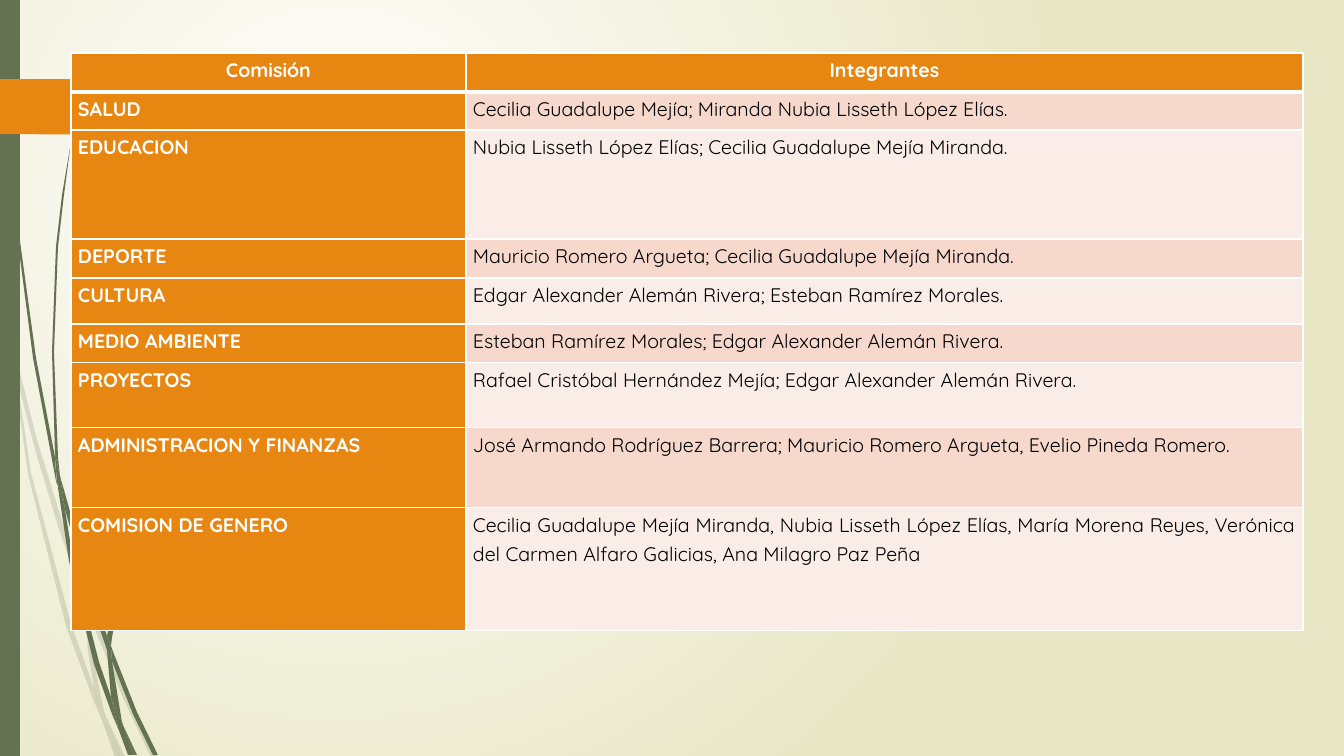
import lxml.etree
import pptx
import pptx.dml.color
import pptx.enum.shapes
import pptx.enum.text
import pptx.oxml
import pptx.oxml.ns
import pptx.util

EMU_PER_PX = 914400 / 100.8
FONT = "Quicksand"
ORANGE, GREEN, WHITE, BLACK = "E78712", "647252", "FFFFFF", "000000"
BANDS = ["F6D9CC", "FAEDE7"]
COLUMN_WIDTHS = [395, 837]
ROW_HEIGHTS = [39, 38, 109, 39, 46, 39, 65, 80, 123]
COMMITTEES = [
    ("Comisión", "Integrantes"),
    ("SALUD", "Cecilia Guadalupe Mejía; Miranda Nubia Lisseth López Elías."),
    ("EDUCACION", "Nubia Lisseth López Elías; Cecilia Guadalupe Mejía Miranda."),
    ("DEPORTE", "Mauricio Romero Argueta; Cecilia Guadalupe Mejía Miranda."),
    ("CULTURA", "Edgar Alexander Alemán Rivera; Esteban Ramírez Morales."),
    ("MEDIO AMBIENTE", "Esteban Ramírez Morales; Edgar Alexander Alemán Rivera."),
    ("PROYECTOS", "Rafael Cristóbal Hernández Mejía; Edgar Alexander Alemán Rivera."),
    ("ADMINISTRACION Y FINANZAS",
     "José Armando Rodríguez Barrera; Mauricio Romero Argueta, Evelio Pineda Romero."),
    ("COMISION DE GENERO",
     "Cecilia Guadalupe Mejía Miranda, Nubia Lisseth López Elías, María Morena Reyes, "
     "Verónica del Carmen Alfaro Galicias, Ana Milagro Paz Peña"),
]
PALE_BLADES = [
    [(11, 353), (9, 325), (0, 284), (0, 301), (10, 347)],
    [(58, 526), (85, 604), (86, 591), (63, 524), (36, 436), (14, 348), (17, 379), (36, 453)],
    [(93, 612), (89, 601), (89, 615), (124, 700), (151, 757), (156, 757), (128, 698)],
    [(120, 757), (125, 757), (106, 717)],
    [(94, 688), (71, 624), (31, 473), (17, 379), (11, 353), (28, 474), (66, 626),
     (93, 699), (102, 720), (100, 713)],
    [(85, 604), (88, 651), (94, 688), (97, 698), (106, 717), (104, 712), (92, 651),
     (89, 615), (89, 613)],
    [(89, 589), (111, 466), (161, 352), (231, 247), (270, 200), (292, 176), (314, 155),
     (314, 154), (291, 176), (270, 199), (230, 246), (159, 351), (108, 465), (86, 589),
     (86, 591), (89, 601)],
    [(102, 720), (115, 757), (120, 757)],
    [(89, 613), (89, 615), (89, 601), (86, 591), (85, 604)],
    [(97, 698), (94, 688), (100, 713), (102, 720), (120, 757), (106, 717)],
]
DARK_BLADES = [
    [(7, 111), (17, 235), (33, 358), (56, 481), (57, 485), (55, 461), (55, 457), (36, 358),
     (19, 234), (8, 110), (5, 48), (4, 0), (3, 0), (4, 48)],
    [(89, 597), (107, 650), (107, 638), (107, 636), (94, 595), (60, 476), (65, 509)],
    [(114, 654), (111, 646), (112, 661), (133, 714), (153, 755), (158, 755), (137, 712)],
    [(111, 697), (99, 662), (73, 560), (65, 509), (57, 481), (69, 561), (94, 664),
     (112, 714), (118, 728), (117, 723)],
    [(60, 476), (58, 457), (54, 352), (58, 247), (64, 195), (71, 142), (62, 195),
     (56, 247), (52, 352), (55, 453)],
    [(134, 755), (137, 755), (123, 725)],
    [(57, 481), (65, 509), (60, 476), (55, 453), (55, 457)],
    [(112, 638), (126, 556), (159, 480), (207, 409), (233, 377), (247, 362), (263, 347),
     (262, 347), (247, 361), (233, 376), (206, 408), (157, 478), (123, 555), (107, 636),
     (111, 646)],
    [(118, 728), (128, 755), (132, 755)],
    [(107, 650), (111, 697), (117, 712), (123, 725), (122, 722), (112, 661), (110, 656)],
    [(107, 650), (110, 656), (112, 661), (111, 646), (107, 636), (107, 638)],
    [(117, 712), (111, 697), (117, 723), (118, 728), (131, 755), (134, 755), (123, 725)],
]
ARROW_TAG = [(174, 109), (149, 134), (147, 135), (0, 134), (0, 79), (147, 79), (149, 80),
             (174, 105), (175, 107)]


def px(length):
    """Turn pixels into EMU."""
    return pptx.util.Emu(round(length * EMU_PER_PX))


def rgb(code):
    """Turn a hex string into a colour."""
    return pptx.dml.color.RGBColor.from_string(code)


def paint_background(slide):
    """Fill the background with a glow that spreads from the upper left."""
    fill = slide.background.fill
    fill.gradient()
    for stop, code in zip(fill.gradient_stops, [WHITE, "E8E6C4"]):
        stop.color.rgb = rgb(code)
    gradient = slide.element.find(".//" + pptx.oxml.ns.qn("a:gradFill"))
    gradient.remove(gradient.find(pptx.oxml.ns.qn("a:lin")))
    gradient.append(pptx.oxml.parse_xml(
        f'<a:path {pptx.oxml.ns.nsdecls("a")} path="circle">'
        '<a:fillToRect l="50000" t="50000" r="100000" b="100000"/></a:path>'))


def paint(shape, code, opacity=100):
    """Give a shape a plain fill without line or shadow."""
    shape.shadow.inherit = False
    shape.line.fill.background()
    shape.fill.solid()
    shape.fill.fore_color.rgb = rgb(code)
    if opacity < 100:
        tint = shape.fill._xPr.find(".//" + pptx.oxml.ns.qn("a:srgbClr"))
        alpha = lxml.etree.SubElement(tint, pptx.oxml.ns.qn("a:alpha"))
        alpha.set("val", str(opacity * 1000))


def add_outline(slide, points, code, opacity=100):
    """Draw a closed filled outline through the points."""
    builder = slide.shapes.build_freeform(*points[0], scale=EMU_PER_PX)
    builder.add_line_segments(points[1:], close=True)
    paint(builder.convert_to_shape(), code, opacity)


def add_borders(cell, top, bottom):
    """Put white borders round a cell, with top and bottom widths in points."""
    properties = cell._tc.get_or_add_tcPr()
    for position, (side, width) in enumerate(zip("LRTB", [1, 1, top, bottom])):
        properties.insert(position, pptx.oxml.parse_xml(
            f'<a:ln{side} {pptx.oxml.ns.nsdecls("a")} w="{pptx.util.Pt(width)}">'
            f'<a:solidFill><a:srgbClr val="{WHITE}"/></a:solidFill></a:ln{side}>'))


def fill_cell(cell, words, background, color, bold, align):
    """Write one styled paragraph in a table cell."""
    cell.margin_left = cell.margin_right = px(7)
    cell.margin_top = cell.margin_bottom = 0
    cell.fill.solid()
    cell.fill.fore_color.rgb = rgb(background)
    paragraph = cell.text_frame.paragraphs[0]
    paragraph.alignment = align
    paragraph.line_spacing = 1.2
    paragraph.space_after = pptx.util.Pt(10)
    run = paragraph.add_run()
    run.text = words
    run.font.name = FONT
    run.font.size = pptx.util.Pt(14)
    run.font.bold = bold
    run.font.color.rgb = rgb(color)


def add_committee_table(slide):
    """Add the table of committees and their members."""
    frame = slide.shapes.add_table(len(COMMITTEES), 2, px(71), px(53),
                                   px(sum(COLUMN_WIDTHS)), px(sum(ROW_HEIGHTS)))
    committees = frame.table
    for column, width in zip(committees.columns, COLUMN_WIDTHS):
        column.width = px(width)
    alignments = pptx.enum.text.PP_ALIGN
    for row, entry in enumerate(COMMITTEES):
        committees.rows[row].height = px(ROW_HEIGHTS[row])
        align = alignments.JUSTIFY if row else alignments.CENTER
        for column, words in enumerate(entry):
            cell = committees.cell(row, column)
            heading = row == 0 or column == 0
            background = ORANGE if heading else BANDS[(row - 1) % 2]
            fill_cell(cell, words, background, WHITE if heading else BLACK, heading, align)
            add_borders(cell, 3 if row == 1 else 1, 3 if row == 0 else 1)


def main():
    """Build the slide and save it."""
    deck = pptx.Presentation()
    deck.slide_width, deck.slide_height = px(1344), px(756)
    slide = deck.slides.add_slide(deck.slide_layouts[6])
    paint_background(slide)
    for blade in PALE_BLADES:
        add_outline(slide, blade, GREEN, 20)
    for blade in DARK_BLADES:
        add_outline(slide, blade, GREEN)
    side_bar = slide.shapes.add_shape(
        pptx.enum.shapes.MSO_SHAPE.RECTANGLE, 0, 0, px(20), px(756))
    paint(side_bar, GREEN)
    add_outline(slide, ARROW_TAG, ORANGE)
    add_committee_table(slide)
    deck.save("out.pptx")


if __name__ == "__main__":
    main()
